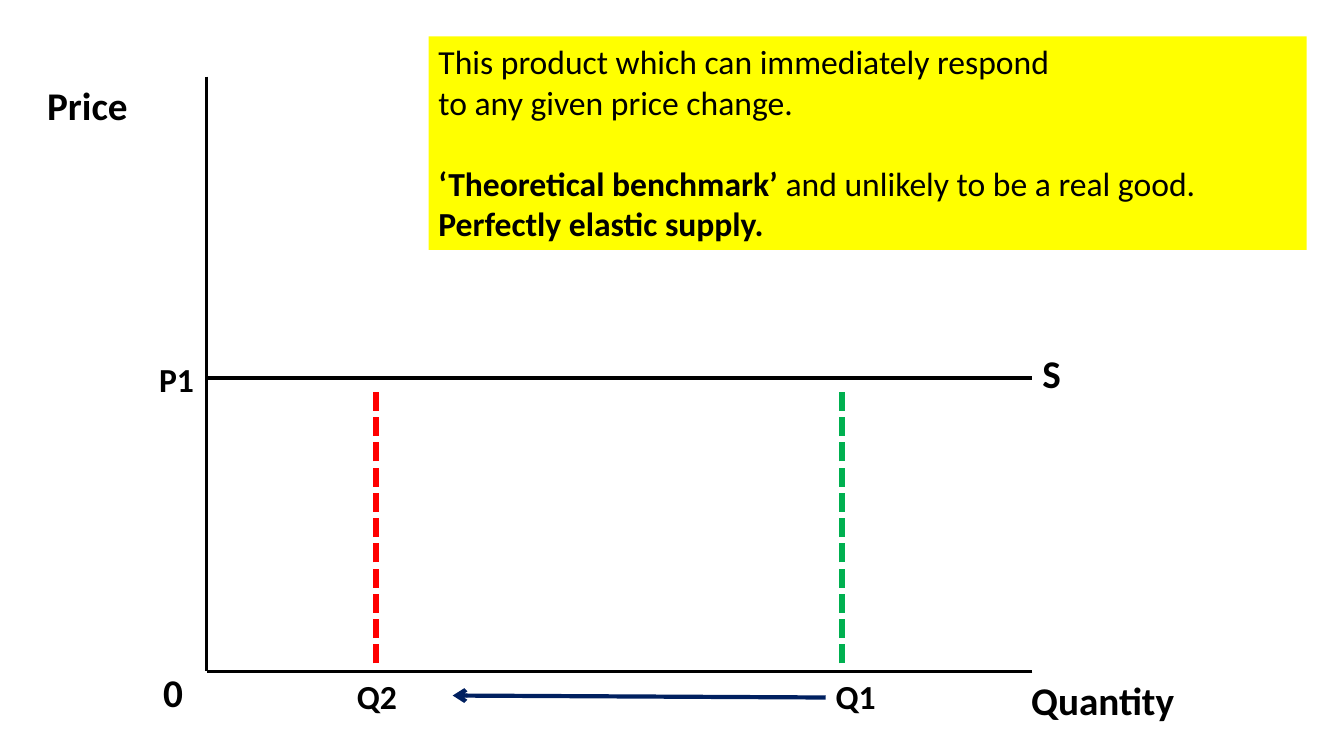
"""Build a slide showing a perfectly elastic supply curve."""
from lxml import etree
from pptx import Presentation
from pptx import util as u
from pptx.dml.color import RGBColor
from pptx.enum import dml, shapes, text
from pptx.oxml.ns import qn

FONT, BLACK = "Calibri", "000000"
LEFT, RIGHT, TOP, BASE, PRICE = 2.05, 10.24, 0.76, 6.66, 3.75
Q2, Q1, GAP = 3.73, 8.35, 0.08

LINES = [
    ((LEFT, TOP), (LEFT, BASE), BLACK, 2.5, False, False),
    ((RIGHT, BASE), (LEFT, BASE), BLACK, 2.5, False, False),
    ((LEFT, PRICE), (RIGHT, PRICE), BLACK, 3, False, False),
    ((Q2, BASE - GAP), (Q2, PRICE + GAP), "FF0000", 4.5, True, False),
    ((Q1, BASE - GAP), (Q1, PRICE + GAP), "00B050", 4.5, True, False),
    ((8.19, 6.92), (4.49, 6.9), "002060", 3, False, True),
]
LABELS = [
    ("Price", 0.37, TOP, 1.57, 28),
    ("Quantity", 10.13, BASE, 2.94, 28),
    ("0", 1.52, BASE - GAP, 0.42, 28),
    ("S", RIGHT, 3.42, 0.63, 28),
    ("P1", 1.48, 3.51, 0.81, 24),
    ("Q1", 8.19, BASE, 0.84, 24),
    ("Q2", 3.44, BASE, 1.05, 24),
]
NOTE_BOX = (4.25, 0.36, 8.71, 2.12)
NOTE_SIZE, NOTE_GAP = 24, 29.3
NOTE = [
    ([("This product which can immediately respond \vto any given price change.", False)], 0),
    ([("‘Theoretical benchmark’ ", True), ("and unlikely to be a real good.", False)], NOTE_GAP),
    ([("Perfectly elastic supply.", True)], 0),
]


def rgb(value):
    return RGBColor.from_string(value)


def inches(*values):
    return [u.Inches(value) for value in values]


def style(font, size, bold):
    font.name, font.size, font.bold = FONT, u.Pt(size), bold
    font.color.rgb = rgb(BLACK)


def add_line(slide, start, end, color, width, dashed, arrow):
    line = slide.shapes.add_connector(
        shapes.MSO_CONNECTOR.STRAIGHT, *inches(*start, *end))
    line.line.color.rgb = rgb(color)
    line.line.width = u.Pt(width)
    if dashed:
        line.line.dash_style = dml.MSO_LINE.SQUARE_DOT
    properties = line._element.spPr
    if arrow:
        etree.SubElement(properties.find(qn("a:ln")), qn("a:tailEnd"), type="arrow")
    etree.SubElement(properties, qn("a:effectLst"))


def add_label(slide, wording, left, top, width, size):
    height = 0.57 if size == 28 else 0.5
    frame = slide.shapes.add_textbox(*inches(left, top, width, height)).text_frame
    frame.word_wrap = True
    frame.auto_size = text.MSO_AUTO_SIZE.SHAPE_TO_FIT_TEXT
    frame.text = wording
    style(frame.paragraphs[0].runs[0].font, size, True)


def add_note(slide):
    note = slide.shapes.add_shape(shapes.MSO_SHAPE.RECTANGLE, *inches(*NOTE_BOX))
    note.shadow.inherit = False
    note.fill.solid()
    note.fill.fore_color.rgb = rgb("FFFF00")
    note.line.fill.background()
    frame = note.text_frame
    frame.word_wrap = True
    frame.auto_size = text.MSO_AUTO_SIZE.SHAPE_TO_FIT_TEXT
    frame.vertical_anchor = text.MSO_ANCHOR.TOP
    for index, (parts, gap) in enumerate(NOTE):
        paragraph = frame.add_paragraph() if index else frame.paragraphs[0]
        paragraph.alignment = text.PP_ALIGN.LEFT
        paragraph.space_before = u.Pt(gap)
        if len(parts) == 1:
            paragraph.text = parts[0][0]
        else:
            for wording, _ in parts:
                paragraph.add_run().text = wording
        for position, run in enumerate(paragraph.runs):
            style(run.font, NOTE_SIZE, parts[min(position, len(parts) - 1)][1])


def main():
    deck = Presentation()
    deck.slide_width, deck.slide_height = inches(13.33, 7.5)
    slide = deck.slides.add_slide(deck.slide_layouts[6])
    for line in LINES:
        add_line(slide, *line)
    for label in LABELS:
        add_label(slide, *label)
    add_note(slide)
    deck.save("out.pptx")


if __name__ == "__main__":
    main()
